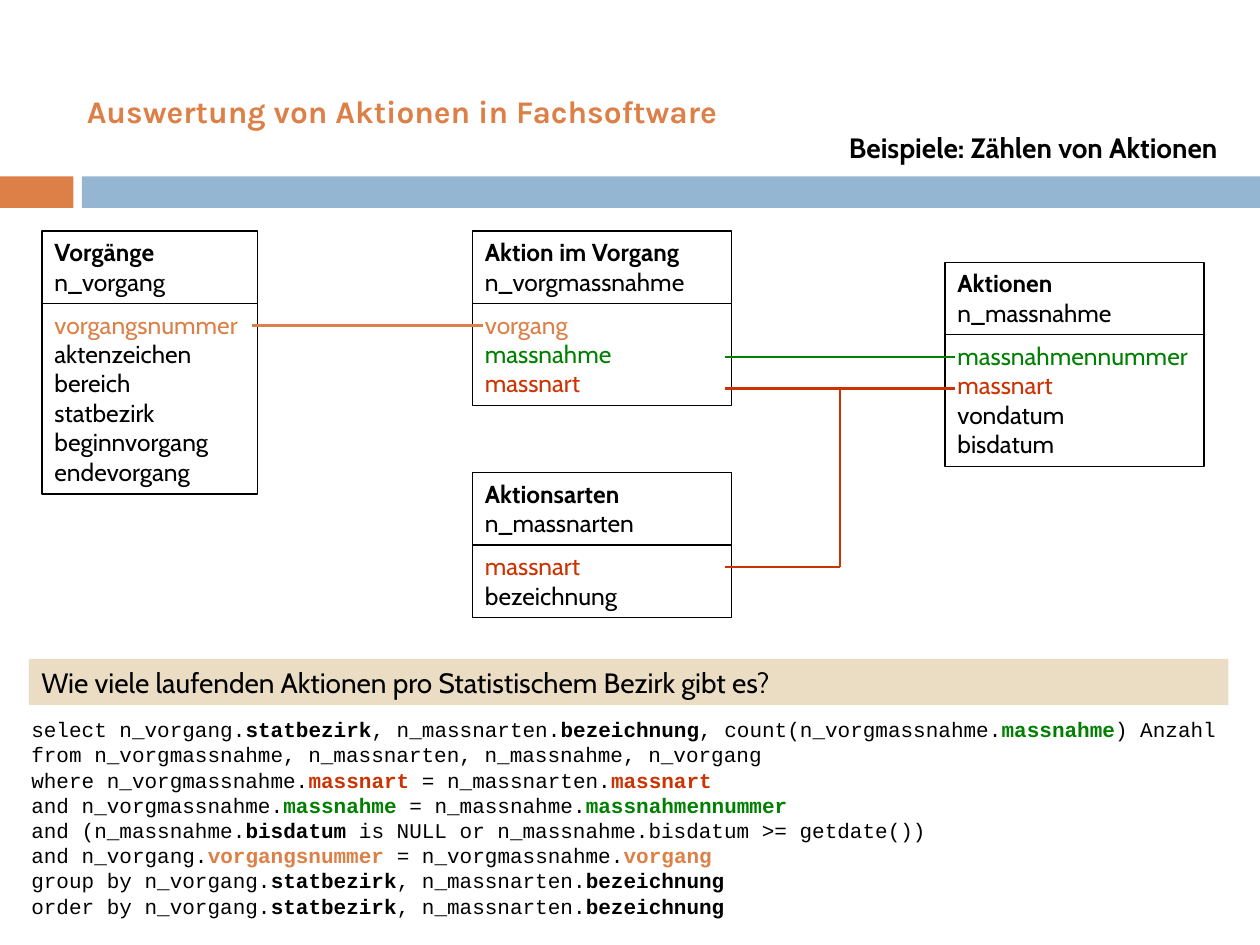
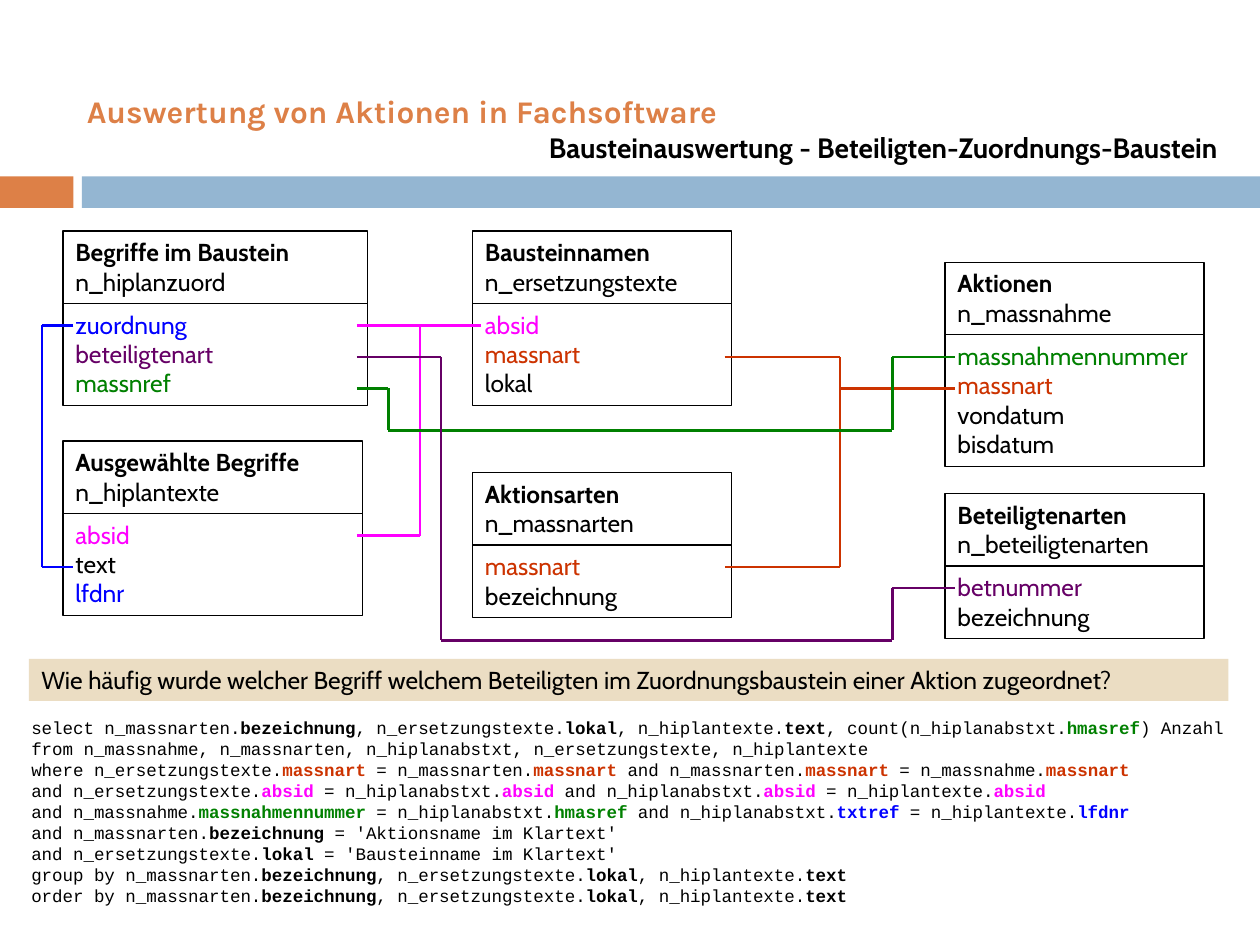
"""Build two slides that show database tables, their key links and an SQL query."""
from itertools import pairwise

from lxml.etree import SubElement
from pptx import Presentation
from pptx.dml.color import RGBColor
from pptx.enum.shapes import MSO_CONNECTOR as Link, MSO_SHAPE as Shape
from pptx.enum.text import MSO_ANCHOR as Anchor, MSO_AUTO_SIZE as Fit, PP_ALIGN as Align
from pptx.oxml.ns import qn
from pptx.util import Pt

BLACK = RGBColor(0x00, 0x00, 0x00)
ORANGE = RGBColor(0xDD, 0x80, 0x47)
STEEL = RGBColor(0x94, 0xB6, 0xD2)
SAND = RGBColor(0xEB, 0xDD, 0xC3)
GREEN = RGBColor(0x00, 0x80, 0x00)
RED = RGBColor(0xCC, 0x33, 0x00)
MAGENTA = RGBColor(0xFF, 0x00, 0xFF)
BLUE = RGBColor(0x00, 0x00, 0xFF)
PURPLE = RGBColor(0x66, 0x00, 0x66)

HEADING = "Auswertung von Aktionen in Fachsoftware"
KEY_COLOURS = {
    HEADING: ORANGE, "vorgangsnummer": ORANGE, "vorgang": ORANGE,
    "massnahme": GREEN, "massnahmennummer": GREEN, "massnref": GREEN, "hmasref": GREEN,
    "massnart": RED, "absid": MAGENTA,
    "zuordnung": BLUE, "lfdnr": BLUE, "txtref": BLUE,
    "beteiligtenart": PURPLE, "betnummer": PURPLE,
}
FRAME_FORMAT = {"word_wrap": True, "auto_size": Fit.NONE, "vertical_anchor": Anchor.TOP}

ACTIONS = (540, 149.8, 148, ["*Aktionen*", "n_massnahme"],
           ["massnahmennummer", "massnart", "vondatum", "bisdatum"])
ACTION_TYPES = (270, 270, 148, ["*Aktionsarten*", "n_massnarten"], ["massnart", "bezeichnung"])

PAGES = [
    {
        "title": "Beispiele: Zählen von Aktionen",
        "question": "Wie viele laufenden Aktionen pro Statistischem Bezirk gibt es?",
        "question_size": 16, "question_height": 26.5, "code_size": 12,
        "tables": [
            (24, 132, 123, ["*Vorgänge*", "n_vorgang"],
             ["vorgangsnummer", "aktenzeichen", "bereich", "statbezirk",
              "beginnvorgang", "endevorgang"]),
            (270, 132, 148, ["*Aktion im Vorgang*", "n_vorgmassnahme"],
             ["vorgang", "massnahme", "massnart"]),
            ACTION_TYPES, ACTIONS,
        ],
        "links": [
            (ORANGE, [(144, 186), (276, 186)]),
            (GREEN, [(414, 204), (546, 204)]),
            (RED, [(414, 222), (546, 222)]),
            (RED, [(414, 324), (480, 324), (480, 222)]),
        ],
        "code": [
            "select n_vorgang.*statbezirk*, n_massnarten.*bezeichnung*, "
            "count(n_vorgmassnahme.*massnahme*) Anzahl",
            "from n_vorgmassnahme, n_massnarten, n_massnahme, n_vorgang",
            "where n_vorgmassnahme.*massnart* = n_massnarten.*massnart*",
            "and n_vorgmassnahme.*massnahme* = n_massnahme.*massnahmennummer*",
            "and (n_massnahme.*bisdatum* is NULL or n_massnahme.bisdatum >= getdate())",
            "and n_vorgang.*vorgangsnummer* = n_vorgmassnahme.*vorgang*",
            "group by n_vorgang.*statbezirk*, n_massnarten.*bezeichnung*",
            "order by n_vorgang.*statbezirk*, n_massnarten.*bezeichnung*",
        ],
    },
    {
        "title": "Bausteinauswertung - Beteiligten-Zuordnungs-Baustein",
        "question": "Wie häufig wurde welcher Begriff welchem Beteiligten im "
                    "Zuordnungsbaustein einer Aktion zugeordnet?",
        "question_size": 14, "question_height": 24, "code_size": 10,
        "tables": [
            (36, 132, 174, ["*Begriffe im Baustein*", "n_hiplanzuord"],
             ["zuordnung", "beteiligtenart", "massnref"]),
            (36, 252, 171, ["*Ausgewählte Begriffe*", "n_hiplantexte"],
             ["absid", "text", "lfdnr"]),
            (270, 132, 148, ["*Bausteinnamen*", "n_ersetzungstexte"],
             ["absid", "massnart", "lokal"]),
            ACTION_TYPES, ACTIONS,
            (540, 282, 148, ["*Beteiligtenarten*", "n_beteiligtenarten"],
             ["betnummer", "bezeichnung"]),
        ],
        "links": [
            (RED, [(414, 204), (480, 204), (480, 324), (414, 324)]),
            (RED, [(480, 222), (546, 222)]),
            (MAGENTA, [(204, 186), (275, 186)]),
            (MAGENTA, [(204, 306), (240, 306), (240, 186)]),
            (GREEN, [(204, 222), (222, 222), (222, 246), (510, 246), (510, 204), (546, 204)]),
            (BLUE, [(42, 186), (24, 186), (24, 324), (42, 324)]),
            (PURPLE, [(204, 204), (252, 204), (252, 366), (510, 366), (510, 336), (546, 336)]),
        ],
        "code": [
            "select n_massnarten.*bezeichnung*, n_ersetzungstexte.*lokal*, "
            "n_hiplantexte.*text*, count(n_hiplanabstxt.*hmasref*) Anzahl",
            "from n_massnahme, n_massnarten, n_hiplanabstxt, n_ersetzungstexte, n_hiplantexte",
            "where n_ersetzungstexte.*massnart* = n_massnarten.*massnart* "
            "and n_massnarten.*massnart* = n_massnahme.*massnart*",
            "and n_ersetzungstexte.*absid* = n_hiplanabstxt.*absid* "
            "and n_hiplanabstxt.*absid* = n_hiplantexte.*absid*",
            "and n_massnahme.*massnahmennummer* = n_hiplanabstxt.*hmasref* "
            "and n_hiplanabstxt.*txtref* = n_hiplantexte.*lfdnr*",
            "and n_massnarten.*bezeichnung* = 'Aktionsname im Klartext'",
            "and n_ersetzungstexte.*lokal* = 'Bausteinname im Klartext'",
            "group by n_massnarten.*bezeichnung*, n_ersetzungstexte.*lokal*, n_hiplantexte.*text*",
            "order by n_massnarten.*bezeichnung*, n_ersetzungstexte.*lokal*, n_hiplantexte.*text*",
        ],
    },
]


def write(box, lines, size, font="Cabin", align=Align.LEFT):
    """Write lines into a box; words between asterisks are bold, key names coloured."""
    frame = box.text_frame
    for name, value in FRAME_FORMAT.items():
        setattr(frame, name, value)
    for number, line in enumerate(lines):
        para = frame.add_paragraph() if number else frame.paragraphs[0]
        para.alignment = align
        for position, words in enumerate(line.split("*")):
            if not words:
                continue
            span = para.add_run()
            span.text = words
            span.font.color.rgb = KEY_COLOURS.get(words, BLACK)
            font_format = {"name": font, "size": Pt(size), "bold": position % 2 == 1}
            for name, value in font_format.items():
                setattr(span.font, name, value)


def add_box(page, left, top, width, height, fill=None):
    """Add a rectangle that is either filled or outlined in black."""
    box = page.shapes.add_shape(Shape.RECTANGLE, Pt(left), Pt(top), Pt(width), Pt(height))
    box.shadow.inherit = False
    if fill is None:
        box.fill.background()
        box.line.color.rgb = BLACK
        box.line.width = Pt(0.75)
    else:
        box.fill.solid()
        box.fill.fore_color.rgb = fill
        box.line.fill.background()
    return box


deck = Presentation()
deck.slide_width, deck.slide_height = Pt(720), Pt(540)
layout = deck.slide_layouts.get_by_name("Title Only")

for content in PAGES:
    page = deck.slides.add_slide(layout)
    title = page.shapes.title
    title.left, title.top, title.width, title.height = Pt(36), Pt(71), Pt(667), Pt(27)
    write(title, [f"*{content['title']}*"], 16, align=Align.RIGHT)

    for left, top, width, names, fields in content["tables"]:
        for lines in (names, fields):
            height = 7.6 + 16.9 * len(lines)
            box = add_box(page, left, top, width, height)
            box.text_frame.margin_right = 0
            write(box, lines, 14)
            top += height

    for colour, points in content["links"]:
        for start, end in pairwise(points):
            link = page.shapes.add_connector(Link.STRAIGHT, *map(Pt, start + end))
            link.line.color.rgb = colour
            link.line.width = Pt(1.5)
            SubElement(link.element.spPr, qn("a:effectLst"))

    question = add_box(page, 16.5, 376.5, 685.5, content["question_height"], SAND)
    write(question, [content["question"]], content["question_size"])

    code = page.shapes.add_textbox(Pt(10.8), Pt(406), Pt(709.2), Pt(124))
    write(code, content["code"], content["code_size"], "Courier New")

first_page = deck.slides[0]
heading = first_page.shapes.add_textbox(Pt(42.5), Pt(49), Pt(398), Pt(29))
write(heading, [f"*{HEADING}*"], 18, "Karla")
short_band = add_box(first_page, 0, 100.8, 42, 18, ORANGE)
long_band = add_box(first_page, 46.8, 100.8, 673.2, 18, STEEL)
for shared in (short_band, long_band, heading):
    layout.shapes.element.append(shared.element)

deck.save("out.pptx")
